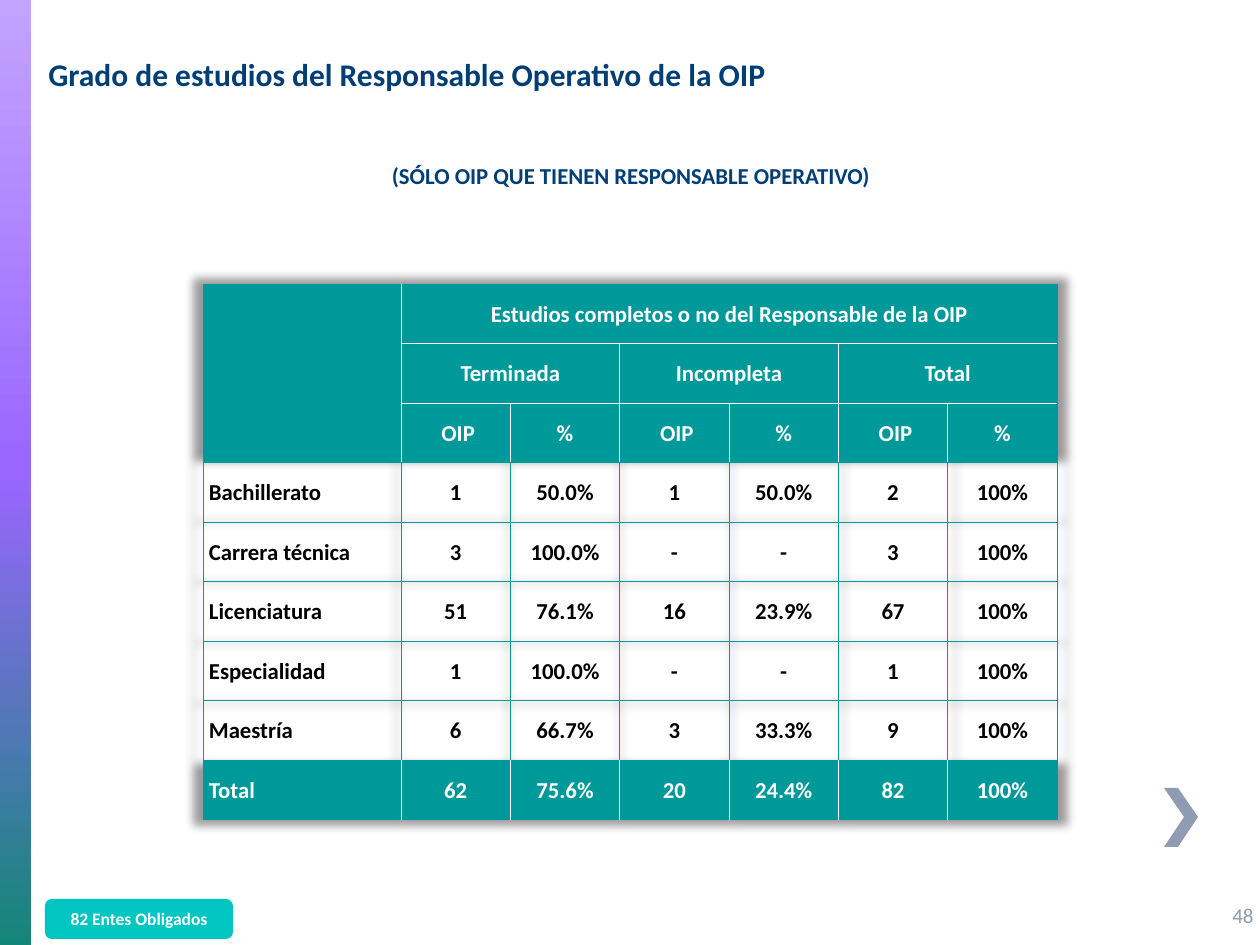
from dataclasses import dataclass

from lxml.etree import SubElement, fromstring
from pptx import Presentation
from pptx.dml.color import RGBColor
from pptx.enum.shapes import MSO_SHAPE as Shape
from pptx.enum.text import MSO_ANCHOR as Anchor, PP_ALIGN as Align
from pptx.oxml.ns import nsdecls, qn
from pptx.util import Pt

PX = 914400 / 126


@dataclass(frozen=True)
class Theme:
    """Colours, font and type sizes of the slide."""
    font: str = "Calibri"
    navy: str = "003E75"
    teal: str = "009999"
    aqua: str = "00C5C0"
    slate: str = "8E9BB0"
    white: str = "FFFFFF"
    black: str = "000000"
    band: tuple = ((0, "C2A3FF"), (50, "9966FF"), (100, "138677"))
    title: int = 18
    body: int = 13
    page: int = 12
    badge: int = 10


THEME = Theme()
HEADINGS = ("Terminada", "Incompleta", "Total")
RECORDS = (
    ("Bachillerato", "1", "50.0%", "1", "50.0%", "2", "100%"),
    ("Carrera técnica", "3", "100.0%", "-", "-", "3", "100%"),
    ("Licenciatura", "51", "76.1%", "16", "23.9%", "67", "100%"),
    ("Especialidad", "1", "100.0%", "-", "-", "1", "100%"),
    ("Maestría", "6", "66.7%", "3", "33.3%", "9", "100%"),
    ("Total", "62", "75.6%", "20", "24.4%", "82", "100%"),
)


def emu(px):
    """Turn pixels into EMU."""
    return round(px * PX)


def write(frame, wording, size, color, align=Align.LEFT, bold=True):
    """Set the text of a frame and format its run."""
    frame.text = wording
    line = frame.paragraphs[0]
    line.alignment = align
    font = line.runs[0].font
    font.name, font.size, font.bold = THEME.font, Pt(size), bold
    font.color.rgb = RGBColor.from_string(color)


def add_label(slide, box, wording, size, color, align=Align.LEFT, anchor=Anchor.MIDDLE, bold=True):
    """Place a line of text in a box."""
    frame = slide.shapes.add_textbox(*map(emu, box)).text_frame
    frame.word_wrap = True
    frame.vertical_anchor = anchor
    write(frame, wording, size, color, align, bold)


def paint(shape, color):
    """Give a shape a plain fill with no line or shadow."""
    shape.shadow.inherit = False
    shape.line.fill.background()
    shape.fill.solid()
    shape.fill.fore_color.rgb = RGBColor.from_string(color)


def add_side_band(slide, box):
    """Draw the vertical gradient band."""
    band = slide.shapes.add_shape(Shape.RECTANGLE, *map(emu, box))
    paint(band, THEME.white)
    stops = "".join(
        f'<a:gs pos="{place * 1000}"><a:srgbClr val="{color}"/></a:gs>' for place, color in THEME.band)
    gradient = fromstring(
        f'<a:gradFill {nsdecls("a")} rotWithShape="1"><a:gsLst>{stops}</a:gsLst>'
        '<a:lin ang="5400000" scaled="0"/></a:gradFill>')
    properties = band.element.spPr
    properties.replace(properties.find(qn("a:solidFill")), gradient)


def add_chevron(slide, box):
    """Draw the arrow that points to the next slide."""
    left, top, width, height = box
    notch, middle = width * 3 // 5, height // 2
    outline = ((0, 0), (width - notch, 0), (width, middle), (width - notch, height),
               (0, height), (notch, middle))
    points = [(left + x, top + y) for x, y in outline]
    builder = slide.shapes.build_freeform(*points[0], scale=PX)
    builder.add_line_segments(points[1:], close=True)
    paint(builder.convert_to_shape(), THEME.slate)


def add_badge(slide, box, wording):
    """Draw the rounded badge."""
    badge = slide.shapes.add_shape(Shape.ROUNDED_RECTANGLE, *map(emu, box))
    paint(badge, THEME.aqua)
    badge.text_frame.vertical_anchor = Anchor.MIDDLE
    write(badge.text_frame, wording, THEME.badge, THEME.white, Align.CENTER)


def add_borders(cell, colors):
    """Set left, right, top and bottom borders of a cell."""
    properties = cell._tc.get_or_add_tcPr()
    for place, (side, color) in enumerate(zip(("lnL", "lnR", "lnT", "lnB"), colors)):
        properties.insert(place, fromstring(
            f'<a:{side} {nsdecls("a")} w="6350"><a:solidFill><a:srgbClr val="{color}"/>'
            f'</a:solidFill></a:{side}>'))


def style_table(table):
    """Remove the preset style and add a soft shadow."""
    table.first_row = table.horz_banding = False
    properties = table._tbl.tblPr
    properties.find(qn("a:tableStyleId")).text = "{2D5ABB26-0587-4C30-8999-92F81FD0307C}"
    effects = fromstring(f'<a:effectLst {nsdecls("a")}/>')
    shadow = SubElement(effects, qn("a:outerShdw"), blurRad="63500", sx="102000", sy="102000",
                        algn="ctr", rotWithShape="0")
    color = SubElement(shadow, qn("a:prstClr"), val="black")
    SubElement(color, qn("a:alpha"), val="40000")
    properties.insert(0, effects)


def add_studies_table(slide, box, label_width):
    """Build the table of degrees by completion."""
    left, top, width, height = box
    columns = 1 + 2 * len(HEADINGS)
    grid = [["", "Estudios completos o no del Responsable de la OIP"] + [""] * (columns - 2),
            [""] + [part for heading in HEADINGS for part in (heading, "")],
            [""] + ["OIP", "%"] * len(HEADINGS), *RECORDS]
    rows = len(grid)
    filled = {0, 1, 2, rows - 1}
    table = slide.shapes.add_table(rows, columns, *map(emu, box)).table
    style_table(table)
    for index, column in enumerate(table.columns):
        column.width = emu((width - label_width) / (columns - 1) if index else label_width)
    for row in table.rows:
        row.height = emu(height / rows)
    table.cell(0, 0).merge(table.cell(2, 0))
    table.cell(0, 1).merge(table.cell(0, columns - 1))
    for start in range(1, columns, 2):
        table.cell(1, start).merge(table.cell(1, start + 1))

    def edge(r, c, near_r, near_c):
        """Pick white between filled cells and teal elsewhere."""
        inside = 0 <= near_c < columns and {r, near_r} <= filled
        return THEME.white if inside else THEME.teal

    for r, c in ((r, c) for r in range(rows) for c in range(columns)):
        cell = table.cell(r, c)
        if r in filled:
            cell.fill.solid()
            cell.fill.fore_color.rgb = RGBColor.from_string(THEME.teal)
        else:
            cell.fill.background()
        if cell.is_spanned:
            continue
        down, across = (cell.span_height, cell.span_width) if cell.is_merge_origin else (1, 1)
        add_borders(cell, (edge(r, c, r, c - 1), edge(r, c, r, c + across),
                           edge(r, c, r - 1, c), edge(r, c, r + down, c)))
        cell.vertical_anchor = Anchor.MIDDLE
        cell.margin_left = emu(6 if c == 0 or grid[r][c] == "OIP" else 1)
        cell.margin_right = cell.margin_top = emu(1)
        cell.margin_bottom = 0
        if grid[r][c]:
            write(cell.text_frame, grid[r][c], THEME.body,
                  THEME.white if r in filled else THEME.black, Align.CENTER if c else Align.LEFT)


def main():
    """Build and save the slide."""
    deck = Presentation()
    deck.slide_width, deck.slide_height = emu(1260), emu(945)
    slide = deck.slides.add_slide(deck.slide_layouts[6])
    add_side_band(slide, (0, 0, 31, 945))
    add_chevron(slide, (1164, 788, 34, 59))
    add_label(slide, (1220, 890, 53, 50), "48", THEME.page, THEME.slate, bold=False)
    add_studies_table(slide, (203, 284, 854, 536), 198)
    add_label(slide, (36, 15, 1171, 118), "Grado de estudios del Responsable Operativo de la OIP",
              THEME.title, THEME.navy)
    add_label(slide, (49, 156, 1163, 40), "(SÓLO OIP QUE TIENEN RESPONSABLE OPERATIVO)",
              THEME.body, THEME.navy, Align.CENTER, Anchor.TOP)
    add_badge(slide, (45, 899, 188, 40), "82 Entes Obligados")
    deck.save("out.pptx")


if __name__ == "__main__":
    main()
